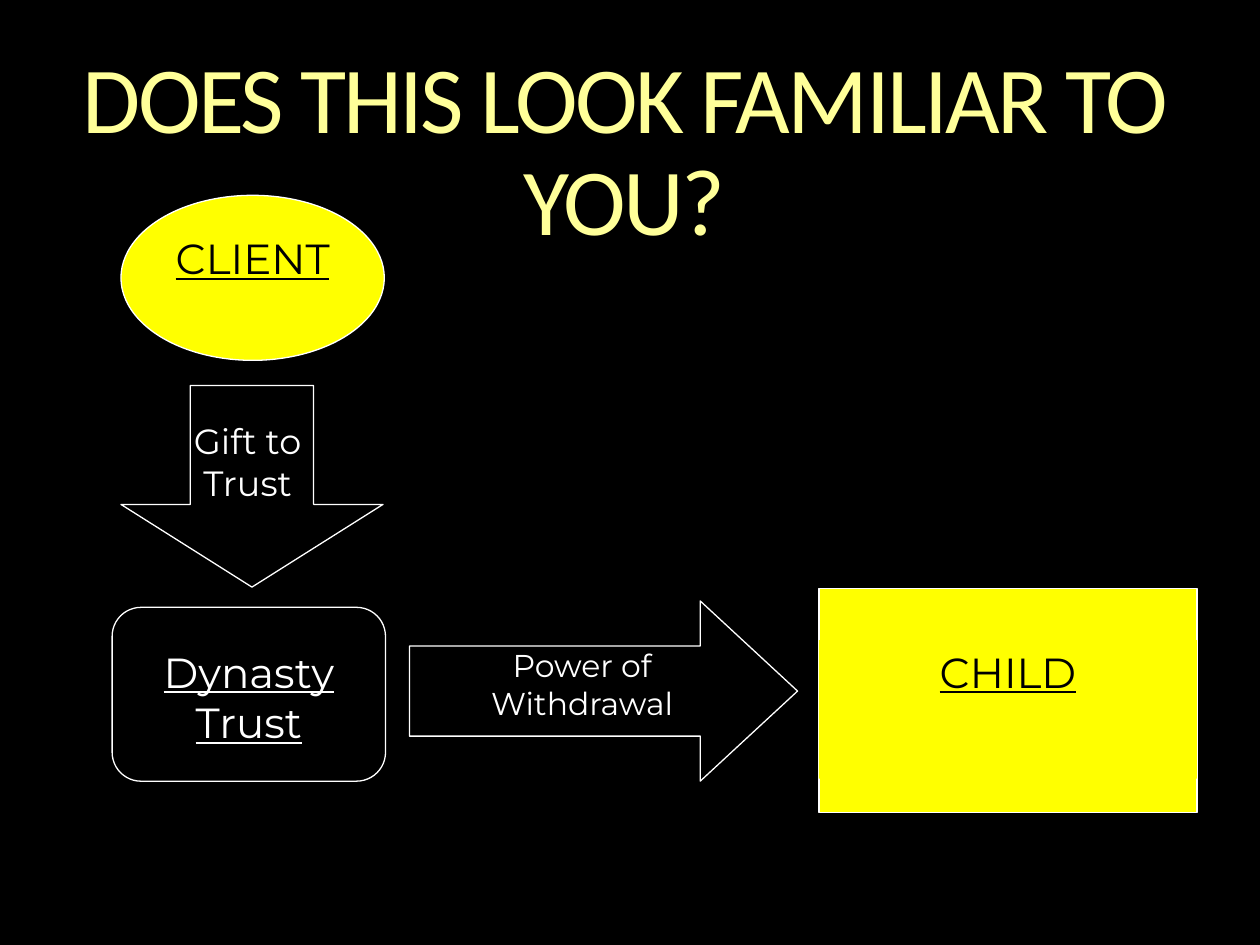
from pptx import Presentation
from pptx.dml.color import RGBColor
from pptx.enum.shapes import MSO_SHAPE
from pptx.enum.text import MSO_ANCHOR, PP_ALIGN
from pptx.util import Inches, Pt

COLUMNS, ROWS = 100, 75
BLACK, WHITE, YELLOW, CREAM = "000000", "FFFFFF", "FFFF00", "FFFF99"

TITLE = ("DOES THIS LOOK FAMILIAR TO YOU?", (3.7, 4.1, 91.7, 16.4))
SHAPES = [
    (MSO_SHAPE.OVAL, (9.6, 15.5, 20.9, 13.1), YELLOW, WHITE, ()),
    (MSO_SHAPE.DOWN_ARROW, (9.6, 30.6, 20.8, 16), None, WHITE, (0.47, 0.41)),
    (MSO_SHAPE.FLOWCHART_ALTERNATE_PROCESS, (8.9, 48.2, 21.7, 13.8), None, WHITE, ()),
    (MSO_SHAPE.RIGHT_ARROW, (32.5, 47.7, 30.8, 14.3), None, WHITE, (0.5, 0.54)),
    (MSO_SHAPE.RECTANGLE, (65, 46.7, 30, 17.8), YELLOW, WHITE, ()),
    (MSO_SHAPE.RECTANGLE, (65, 50.8, 30, 11), YELLOW, None, ()),
]
LABELS = [
    (["CLIENT"], (9.6, 18, 20.9, 11), 24, BLACK, True),
    (["Gift to Trust"], (13.4, 32.8, 12.5, 7.7), 20, WHITE, False),
    (["Dynasty Trust"], (8.9, 50.8, 21.7, 9), 24, WHITE, True),
    (["Power of", "Withdrawal"], (28.3, 50.8, 35.8, 7), 18, WHITE, False),
    (["CHILD"], (65, 50.8, 30, 11), 24, BLACK, True),
]


def color(code):
    return RGBColor.from_string(code)


def place(deck, area):
    left, top, width, height = area
    column, row = deck.slide_width / COLUMNS, deck.slide_height / ROWS
    return int(left * column), int(top * row), int(width * column), int(height * row)


def paint(part, code):
    if code:
        part.solid()
        part.fore_color.rgb = color(code)
    else:
        part.background()


def add_figure(deck, page, kind, area, fill, line, adjustments):
    figure = page.shapes.add_shape(kind, *place(deck, area))
    figure.shadow.inherit = False
    paint(figure.fill, fill)
    paint(figure.line.fill, line)
    if line:
        figure.line.width = Pt(0.75)
    for index, value in enumerate(adjustments):
        figure.adjustments[index] = value


def add_text(deck, page, lines, area, size, code, underline=False, face="Montserrat"):
    frame = page.shapes.add_textbox(*place(deck, area)).text_frame
    frame.word_wrap = True
    frame.vertical_anchor = MSO_ANCHOR.TOP
    frame.text = "\n".join(lines)
    for paragraph in frame.paragraphs:
        paragraph.alignment = PP_ALIGN.CENTER
        font = paragraph.font
        font.name, font.size, font.underline = face, Pt(size), underline
        font.color.rgb = color(code)
    return frame


def add_title(deck, page):
    text, area = TITLE
    frame = add_text(deck, page, [text], area, 54, CREAM, face="Calibri")
    frame.margin_left = frame.margin_right = frame.margin_top = frame.margin_bottom = 0
    paragraph = frame.paragraphs[0]
    paragraph.line_spacing = 0.9
    paragraph.runs[0]._r.get_or_add_rPr().set("spc", "-150")


def main():
    """Build the trust gift and withdrawal diagram."""
    deck = Presentation()
    deck.slide_width, deck.slide_height = Inches(10), Inches(7.5)
    page = deck.slides.add_slide(deck.slide_layouts[6])
    paint(page.background.fill, BLACK)
    add_title(deck, page)
    for figure in SHAPES:
        add_figure(deck, page, *figure)
    for label in LABELS:
        add_text(deck, page, *label)
    deck.save("out.pptx")


if __name__ == "__main__":
    main()
